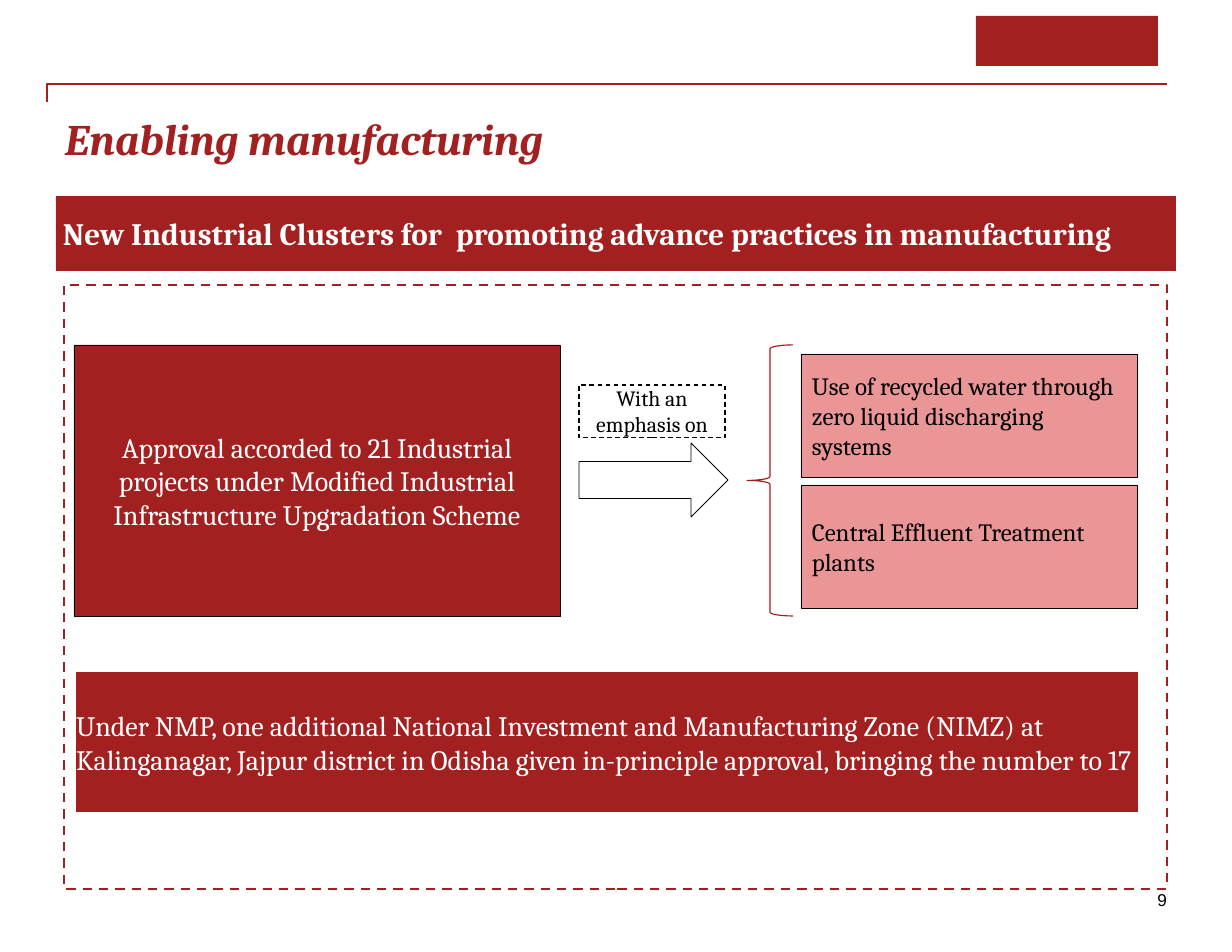
import dataclasses

import pptx
import pptx.dml.color
import pptx.enum.dml
import pptx.enum.shapes
import pptx.enum.text
import pptx.util

SCALE = 914400 / 112
KIND = pptx.enum.shapes.MSO_SHAPE
ALIGN = pptx.enum.text.PP_ALIGN
ANCHOR = pptx.enum.text.MSO_ANCHOR
DASH = pptx.enum.dml.MSO_LINE.DASH


@dataclasses.dataclass(frozen=True)
class Theme:
    red: str = "A32020"
    brace: str = "A31C1C"
    pink: str = "EA9696"
    white: str = "FFFFFF"
    black: str = "000000"
    serif: str = "Cambria"
    sans: str = "Arial"
    title: int = 28
    head: int = 20
    body: int = 18
    card: int = 16
    label: int = 14
    page: int = 11


THEME = Theme()


def px(size):
    return round(size * SCALE)


def rgb(code):
    return pptx.dml.color.RGBColor.from_string(code)


def apply(item, values):
    for name, value in values.items():
        setattr(item, name, value)


def paint(shape, fill=None, line=None, width=0.5, dash=None):
    shape.shadow.inherit = False
    if fill:
        shape.fill.solid()
        shape.fill.fore_color.rgb = rgb(fill)
    else:
        shape.fill.background()
    if line:
        shape.line.color.rgb = rgb(line)
        shape.line.width = pptx.util.Pt(width)
        shape.line.dash_style = dash
    else:
        shape.line.fill.background()


def write(shape, text, size, color, align=ALIGN.LEFT, anchor=ANCHOR.MIDDLE,
          inset=(0, 0, 0, 0), wrap=True, face=THEME.serif, **style):
    frame = shape.text_frame
    sides = ("margin_left", "margin_top", "margin_right", "margin_bottom")
    apply(frame, dict(zip(sides, map(px, inset))))
    apply(frame, {"word_wrap": wrap, "vertical_anchor": anchor,
                  "auto_size": pptx.enum.text.MSO_AUTO_SIZE.NONE})
    para = frame.paragraphs[0]
    para.alignment = align
    run = para.add_run()
    run.text = text
    apply(run.font, {"name": face, "size": pptx.util.Pt(size), **style})
    run.font.color.rgb = rgb(color)


def draw(slide, kind, box, **look):
    shape = slide.shapes.add_shape(kind, *map(px, box))
    paint(shape, **look)
    return shape


def header(slide, box):
    left, top, width, height = box
    path = slide.shapes.build_freeform(left, top + 102, scale=SCALE)
    path.add_line_segments([(left, top + 84), (left + width, top + 84)], close=False)
    paint(path.convert_to_shape(), line=THEME.red, width=1)
    draw(slide, KIND.RECTANGLE, (left + 929, top + 16, 182, 50), fill=THEME.red)
    title = slide.shapes.title
    place = (left + 18, top + 112, 1102, height - 112)
    apply(title, dict(zip(("left", "top", "width", "height"), map(px, place))))
    write(title, "Enabling manufacturing", THEME.title, THEME.red, ALIGN.JUSTIFY,
          ANCHOR.TOP, bold=True, italic=True)


def banner(slide, box, text, size, inset=0, bold=False):
    shape = draw(slide, KIND.RECTANGLE, box, fill=THEME.red)
    write(shape, text, size, THEME.white, inset=(inset, 0, 0, 0), bold=bold)


def flow(slide, box):
    left, top, width, height = box
    pad = (11, 6, 11, 6)
    shape = draw(slide, KIND.RECTANGLE, (left, top, 486, height),
                 fill=THEME.red, line=THEME.black)
    write(shape, "Approval accorded to 21 Industrial projects under Modified "
          "Industrial Infrastructure Upgradation Scheme",
          THEME.body, THEME.white, ALIGN.CENTER, inset=pad)
    label = draw(slide, KIND.RECTANGLE, (left + 505, top + 40, 146, 53),
                 line=THEME.black, width=0.75, dash=DASH)
    write(label, "With an emphasis on", THEME.label, THEME.black,
          ALIGN.CENTER, ANCHOR.TOP)
    draw(slide, KIND.RIGHT_ARROW, (left + 505, top + 98, 149, 74),
         fill=THEME.white, line=THEME.black)
    draw(slide, KIND.LEFT_BRACE, (left + 673, top, 46, height),
         line=THEME.brace, width=0.75)
    cards = ("Use of recycled water through zero liquid discharging systems",
             "Central Effluent Treatment plants")
    for row, text in enumerate(cards):
        card = draw(slide, KIND.RECTANGLE,
                    (left + width - 336, top + 9 + row * 131, 336, 123),
                    fill=THEME.pink, line=THEME.black)
        write(card, text, THEME.card, THEME.black, inset=pad)


def panel(slide, box):
    left, top, width, height = box
    flow(slide, (left + 10, top + 60, width - 40, 271))
    banner(slide, (left + 12, top + 387, 1062, 140),
           "Under NMP, one additional National Investment and Manufacturing Zone "
           "(NIMZ) at Kalinganagar, Jajpur district in Odisha given in-principle "
           "approval, bringing the number to 17", THEME.body)
    draw(slide, KIND.RECTANGLE, box, line=THEME.red, width=1.5, dash=DASH)


def footer(slide, box):
    shape = slide.shapes.add_textbox(*map(px, box))
    write(shape, "9", THEME.page, THEME.black, ALIGN.RIGHT, ANCHOR.TOP,
          wrap=False, face=THEME.sans)


def main():
    deck = pptx.Presentation()
    apply(deck, {"slide_width": px(1232), "slide_height": px(952)})
    slide = deck.slides.add_slide(deck.slide_layouts[5])
    header(slide, (47, 0, 1120, 196))
    banner(slide, (56, 196, 1120, 75),
           "New Industrial Clusters for  promoting advance practices in manufacturing",
           THEME.head, inset=7, bold=True)
    panel(slide, (64, 285, 1103, 604))
    footer(slide, (1157, 889, 10, 21))
    deck.save("out.pptx")


if __name__ == "__main__":
    main()
